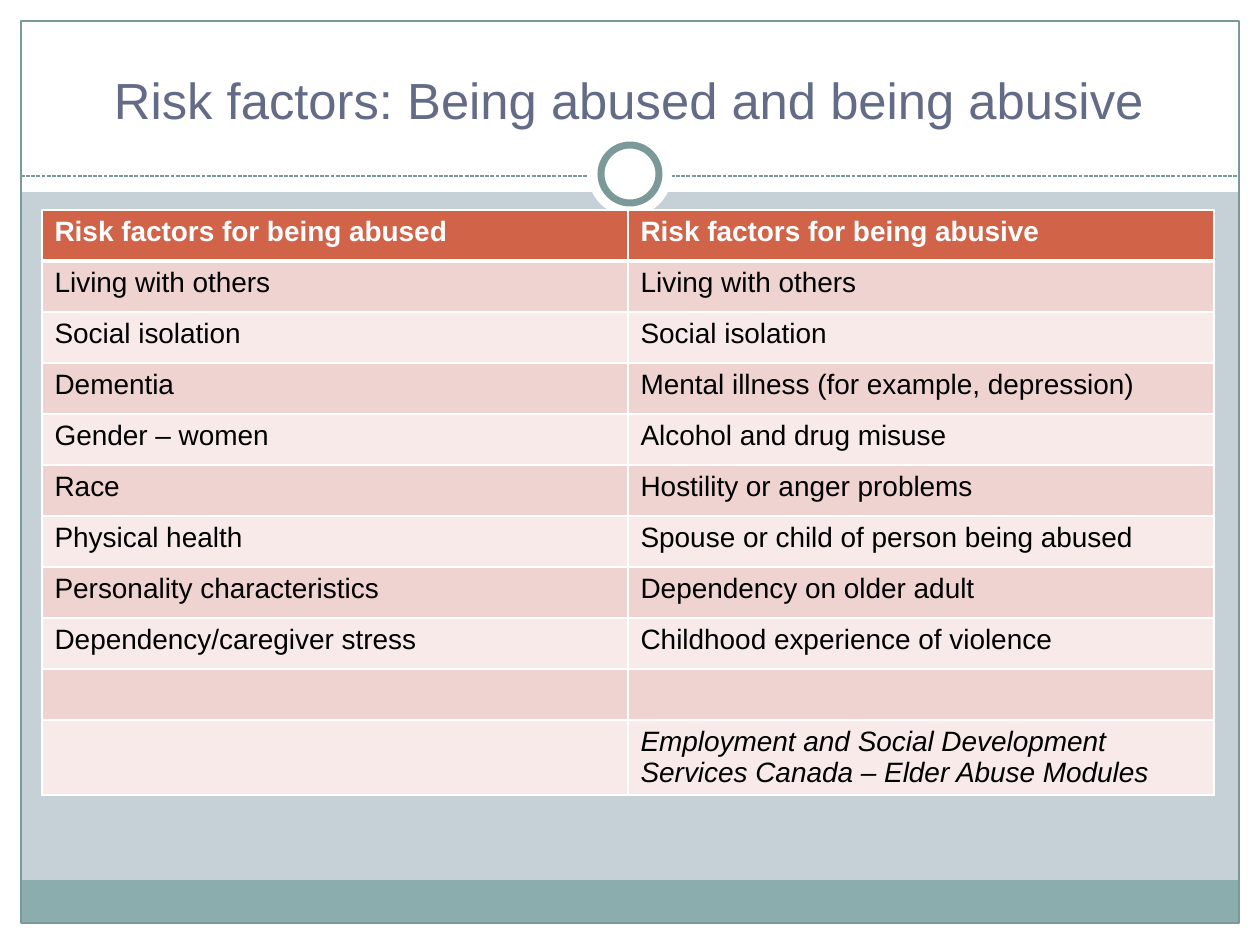
from lxml.etree import SubElement
from pptx import Presentation
from pptx.dml.color import RGBColor
from pptx.enum.dml import MSO_LINE
from pptx.enum.shapes import MSO_CONNECTOR, MSO_SHAPE
from pptx.enum.text import MSO_ANCHOR, MSO_AUTO_SIZE, PP_ALIGN
from pptx.oxml.ns import qn
from pptx.util import Pt

PIXELS_PER_INCH = 126
WIDTH, HEIGHT = 1260, 945
WHITE, BACKGROUND, TEAL, FOOTER = "FFFFFF", "C5D0D7", "7C999A", "8CADAE"
HEADER, DARK_BAND, LIGHT_BAND = "D16349", "EED3D0", "F7EAE9"

TITLE = "Risk factors: Being abused and being abusive"
ROWS = [
    ("Risk factors for being abused", "Risk factors for being abusive"),
    ("Living with others", "Living with others"),
    ("Social isolation", "Social isolation"),
    ("Dementia", "Mental illness (for example, depression)"),
    ("Gender – women", "Alcohol and drug misuse"),
    ("Race", "Hostility or anger problems"),
    ("Physical health", "Spouse or child of person being abused"),
    ("Personality characteristics", "Dependency on older adult"),
    ("Dependency/caregiver stress", "Childhood experience of violence"),
    ("", ""),
    ("", "Employment and Social Development Services Canada – Elder Abuse Modules"),
]


def px(length):
    return round(length * 914400 / PIXELS_PER_INCH)


def color(value):
    return RGBColor.from_string(value)


def write_text(frame, text, size=16, fill="000000", bold=False, italic=False, align=PP_ALIGN.LEFT):
    paragraph = frame.paragraphs[0]
    paragraph.alignment = align
    run = paragraph.add_run()
    run.text = text
    font = run.font
    font.name, font.size, font.bold, font.italic = "Arial", Pt(size), bold, italic
    font.color.rgb = color(fill)


def add_box(slide, box, kind=MSO_SHAPE.RECTANGLE, fill=None, line=None, line_width=0.75):
    shape = slide.shapes.add_shape(kind, *map(px, box))
    shape.shadow.inherit = False
    if fill:
        shape.fill.solid()
        shape.fill.fore_color.rgb = color(fill)
    else:
        shape.fill.background()
    if line:
        shape.line.color.rgb = color(line)
        shape.line.width = Pt(line_width)
    else:
        shape.line.fill.background()


def add_frame(slide, left, top, width, height):
    right, bottom = left + width, top + height
    for box in [
        (0, bottom, WIDTH, HEIGHT - bottom),
        (0, 0, WIDTH, 192),
        (0, 0, left, HEIGHT),
        (right, 0, WIDTH - right, HEIGHT),
    ]:
        add_box(slide, box, fill=WHITE)
    add_box(slide, (left, bottom - 43, width, 43), fill=FOOTER)
    add_box(slide, (left, top, width, height), line=TEAL)


def add_divider(slide, left, middle, width):
    connector = slide.shapes.add_connector(
        MSO_CONNECTOR.STRAIGHT, px(left), px(middle), px(left + width), px(middle)
    )
    connector.line.color.rgb = color(TEAL)
    connector.line.width = Pt(0.75)
    connector.line.dash_style = MSO_LINE.SQUARE_DOT
    SubElement(connector.element.spPr, qn("a:effectLst"))
    center = left + width // 2
    for diameter, style in [(84, {}), (58, {"line": TEAL, "line_width": 4})]:
        box = (center - diameter // 2, middle - 2 - diameter // 2, diameter, diameter)
        add_box(slide, box, MSO_SHAPE.OVAL, fill=WHITE, **style)


def place_title(slide, left, top, width, height):
    title = slide.shapes.title
    title.left, title.top, title.width, title.height = map(px, (left, top, width, height))
    title.element.getparent().append(title.element)
    frame = title.text_frame
    frame.word_wrap = True
    frame.auto_size = MSO_AUTO_SIZE.NONE
    frame.vertical_anchor = MSO_ANCHOR.BOTTOM
    write_text(frame, TITLE, size=29, fill="646B86", align=PP_ALIGN.CENTER)


def set_borders(cell, **widths):
    properties = cell._tc.get_or_add_tcPr()
    for side in "LRTB":
        line = SubElement(properties, qn(f"a:ln{side}"), w=str(Pt(widths.get(side, 1))))
        solid = SubElement(line, qn("a:solidFill"))
        SubElement(solid, qn("a:srgbClr"), val=WHITE)


def add_risk_table(slide, left, top, width, row_height, last_height):
    last = len(ROWS) - 1
    height = row_height * last + last_height
    shape = slide.shapes.add_table(len(ROWS), 2, *map(px, (left, top, width, height)))
    table = shape.table
    for row_index, texts in enumerate(ROWS):
        is_header, is_last = row_index == 0, row_index == last
        table.rows[row_index].height = px(last_height if is_last else row_height)
        band = HEADER if is_header else DARK_BAND if row_index % 2 else LIGHT_BAND
        for column_index, text in enumerate(texts):
            cell = table.cell(row_index, column_index)
            set_borders(cell, T=3 if row_index == 1 else 1, B=3 if is_header else 1)
            cell.fill.solid()
            cell.fill.fore_color.rgb = color(band)
            if text:
                write_text(
                    cell.text_frame, text, fill=WHITE if is_header else "000000",
                    bold=is_header, italic=is_last,
                )


def main():
    presentation = Presentation()
    presentation.slide_width, presentation.slide_height = px(WIDTH), px(HEIGHT)
    slide = presentation.slides.add_slide(presentation.slide_layouts[5])
    slide.background.fill.solid()
    slide.background.fill.fore_color.rgb = color(BACKGROUND)
    add_frame(slide, 21, 21, 1218, 902)
    add_divider(slide, 21, 176, 1218)
    place_title(slide, 42, 31, 1175, 105)
    add_risk_table(slide, 42, 210, 1172, 51, 75)
    presentation.save("out.pptx")


if __name__ == "__main__":
    main()
